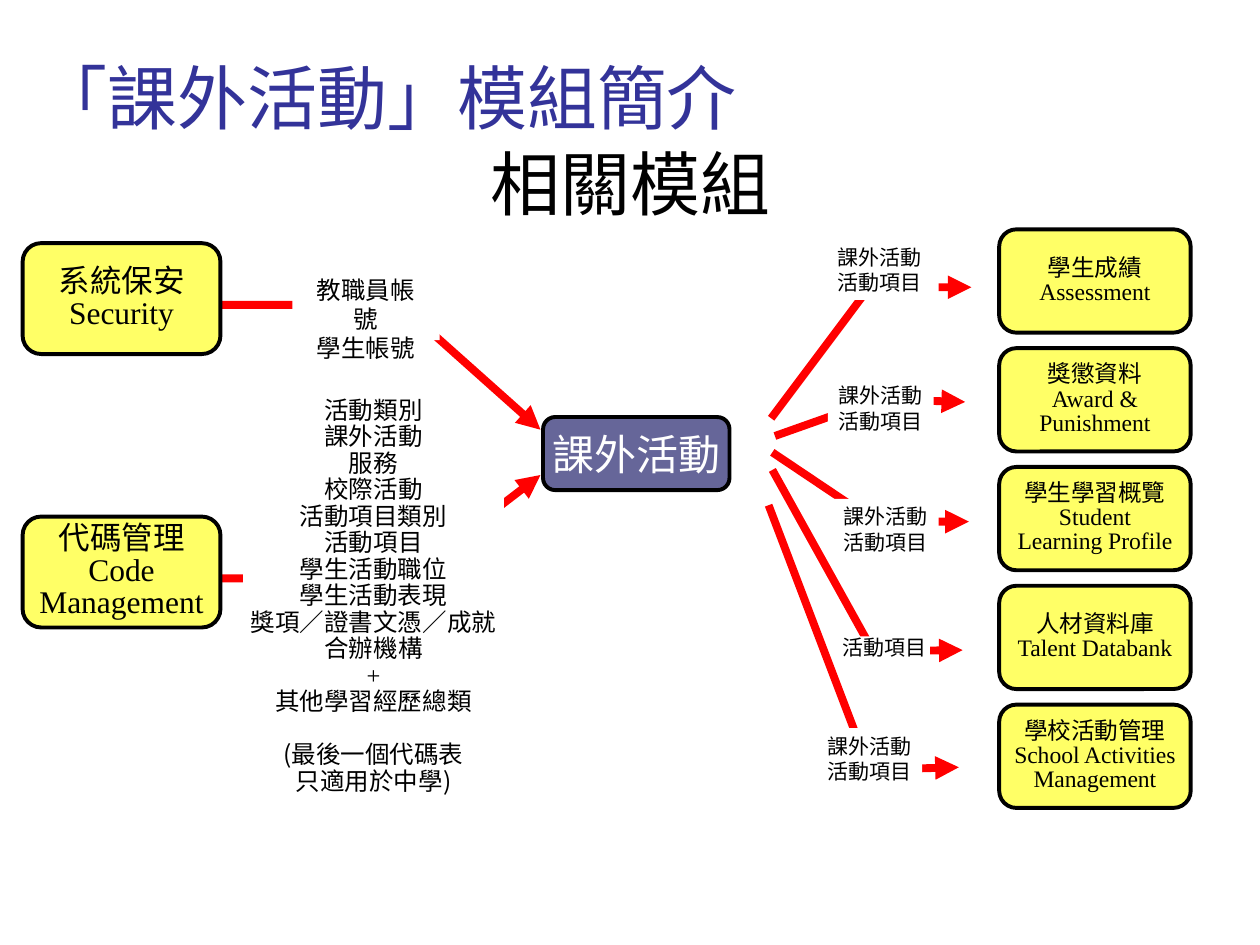
import dataclasses

import pptx
import pptx.dml.color
import pptx.enum.shapes
import pptx.enum.text
import pptx.oxml.ns
import pptx.util
from lxml import etree
from pptx.util import Inches, Pt

ALIGN = pptx.enum.text.PP_ALIGN
ANCHOR = pptx.enum.text.MSO_ANCHOR
AUTO_SIZE = pptx.enum.text.MSO_AUTO_SIZE
PRESET = pptx.enum.shapes.MSO_SHAPE


@dataclasses.dataclass(frozen=True)
class Theme:
    title: str = "333399"
    ink: str = "000000"
    paper: str = "FFFFFF"
    arrow: str = "FF0000"
    related: str = "FFFF66"
    module: str = "666699"
    body_font: str = "Times New Roman"
    title_font: str = "Karla"
    note_font: str = "Noto Sans CJK SC"
    title_size: float = 40
    module_size: float = 24
    source_size: float = 18
    input_size: float = 14
    target_size: float = 13.5
    output_size: float = 12
    border: float = 2.25
    arrow_width: float = 4.5


THEME = Theme()


def rgb(value):
    return pptx.dml.color.RGBColor.from_string(value)


def write(shape, lines, size, color=THEME.ink, font=THEME.body_font, spacing=1.0,
          align=ALIGN.CENTER, insets=(0.1, 0.05), wrap=True, grow=False,
          anchor=ANCHOR.TOP):
    frame = shape.text_frame
    frame.word_wrap = wrap
    frame.auto_size = AUTO_SIZE.SHAPE_TO_FIT_TEXT if grow else AUTO_SIZE.NONE
    frame.vertical_anchor = anchor
    frame.margin_left = frame.margin_right = Inches(insets[0])
    frame.margin_top = frame.margin_bottom = Inches(insets[1])
    for index, line in enumerate(lines):
        paragraph = frame.paragraphs[0] if index == 0 else frame.add_paragraph()
        paragraph.text = line
        paragraph.alignment = align
        paragraph.line_spacing = spacing
        paragraph.font.size = Pt(size)
        paragraph.font.name = font
        paragraph.font.color.rgb = rgb(color)
    return frame.paragraphs


def add_block(slide, preset, box, fill, border=None):
    block = slide.shapes.add_shape(preset, *(Inches(v) for v in box))
    block.shadow.inherit = False
    block.fill.solid()
    block.fill.fore_color.rgb = rgb(fill)
    if border:
        block.line.color.rgb = rgb(border)
        block.line.width = Pt(THEME.border)
    else:
        block.line.fill.background()
    return block


def add_module(slide, box, lines, size, fill=THEME.related, color=THEME.ink,
               spacing=0.85):
    block = add_block(slide, PRESET.ROUNDED_RECTANGLE, box, fill, THEME.ink)
    write(block, lines, size, color, spacing=spacing, insets=(0.07, 0.04),
          wrap=False, anchor=ANCHOR.MIDDLE)


def add_label(slide, box, lines, size, **text_style):
    block = add_block(slide, PRESET.RECTANGLE, box, THEME.paper)
    return write(block, lines, size, grow=True, **text_style)


def add_arrow(slide, left, top, points):
    """Bent arrow through points, given relative to left and top."""
    start, *rest = [(Inches(left + x), Inches(top + y)) for x, y in points]
    builder = slide.shapes.build_freeform(*start)
    builder.add_line_segments(rest, close=False)
    arrow = builder.convert_to_shape()
    arrow.shadow.inherit = False
    arrow.fill.background()
    arrow.line.color.rgb = rgb(THEME.arrow)
    arrow.line.width = Pt(THEME.arrow_width)
    etree.SubElement(arrow.line._get_or_add_ln(),
                     pptx.oxml.ns.qn("a:tailEnd"), type="triangle")


def add_headings(slide, left, top, width):
    headings = (
        (1.02, 0.77, "相關模組", THEME.ink, ALIGN.CENTER, 1.0),
        (0, 1.1, "「課外活動」模組簡介", THEME.title, ALIGN.LEFT, 1.5),
    )
    for dy, height, words, color, align, spacing in headings:
        heading = slide.shapes.add_textbox(
            Inches(left), Inches(top + dy), Inches(width), Inches(height))
        write(heading, [words], THEME.title_size, color, THEME.title_font,
              spacing, align, grow=True)


def add_sources(slide, left, top):
    module_width, module_height = 1.57, 0.88

    # Code management and the code tables it supplies
    add_arrow(slide, left, top, [(1.55, 2.66), (3.04, 2.66), (4.11, 1.84)])
    add_module(slide, (left, top + 2.17, module_width, module_height),
               ["代碼管理", "Code", "Management"], THEME.source_size)
    code_tables = ["活動類別", "課外活動", "服務", "校際活動", "活動項目類別", "活動項目",
                   "學生活動職位", "學生活動表現", "獎項／證書文憑／成就", "合辦機構", "+",
                   "其他學習經歷總類"]
    remark = ["(最後一個代碼表", "只適用於中學)"]
    paragraphs = add_label(slide, (left + 1.75, top + 1.18, 2.07, 3.28),
                           code_tables + remark, THEME.input_size,
                           spacing=0.9, insets=(0, 0.05))
    remark_paragraphs = paragraphs[len(code_tables):]
    remark_paragraphs[0].space_before = Pt(15.2)
    for paragraph in remark_paragraphs:
        paragraph.font.name = THEME.note_font

    # Security and the accounts it supplies
    add_arrow(slide, left, top, [(1.45, 0.49), (3, 0.49), (4.11, 1.48)])
    add_module(slide, (left, top, module_width, module_height),
               ["系統保安", "Security"], THEME.source_size)
    add_label(slide, (left + 2.14, top + 0.2, 1.17, 0.57),
              ["教職員帳號", "學生帳號"], THEME.input_size, wrap=False)


def add_targets(slide, left, top):
    pitch, module_left, module_width, module_height = 0.943, 1.83, 1.52, 0.82
    both = ["課外活動", "活動項目"]
    # Module name, arrow points, label box, label lines, label spacing
    targets = (
        (["學生成績", "Assessment"],
         [(0.02, 1.5), (0.8, 0.46), (1.61, 0.46)],
         (0.41, 0.08, 0.94, 0.48), both, 1.0),
        (["獎懲資料", "Award &", "Punishment"],
         [(0.05, 1.64), (0.87, 1.35), (1.56, 1.37)],
         (0.47, 1.18, 0.84, 0.48), both, 1.0),
        (["學生學習概覽", "Student", "Learning Profile"],
         [(0.03, 1.77), (0.85, 2.32), (1.59, 2.32)],
         (0.51, 2.14, 0.84, 0.48), both, 1.0),
        (["人材資料庫", "Talent Databank"],
         [(0.03, 1.91), (0.83, 3.35), (1.54, 3.34)],
         (0.56, 3.23, 0.72, 0.22), both[1:], 0.7),
        (["學校活動管理", "School Activities", "Management"],
         [(0, 2.19), (0.8, 4.29), (1.51, 4.27)],
         (0.38, 3.96, 0.84, 0.48), both, 1.0),
    )
    for row, (name, points, label_box, label, spacing) in enumerate(targets):
        add_arrow(slide, left, top, points)
        add_module(slide, (left + module_left, top + row * pitch,
                           module_width, module_height), name, THEME.target_size)
        x, y, width, height = label_box
        add_label(slide, (left + x, top + y, width, height), label,
                  THEME.output_size, spacing=spacing, insets=(0, 0.04))


def main():
    presentation = pptx.Presentation()
    presentation.slide_width = Inches(10)
    presentation.slide_height = Inches(7.5)
    slide = presentation.slides.add_slide(presentation.slide_layouts[6])

    add_headings(slide, 0.2, 0.05, 9.61)
    add_sources(slide, 0.18, 1.93)
    # Central module
    add_module(slide, (4.31, 3.31, 1.48, 0.58), ["課外活動"], THEME.module_size,
               THEME.module, THEME.paper, spacing=1.0)
    add_targets(slide, 6.1, 1.82)
    presentation.save("out.pptx")


if __name__ == "__main__":
    main()
